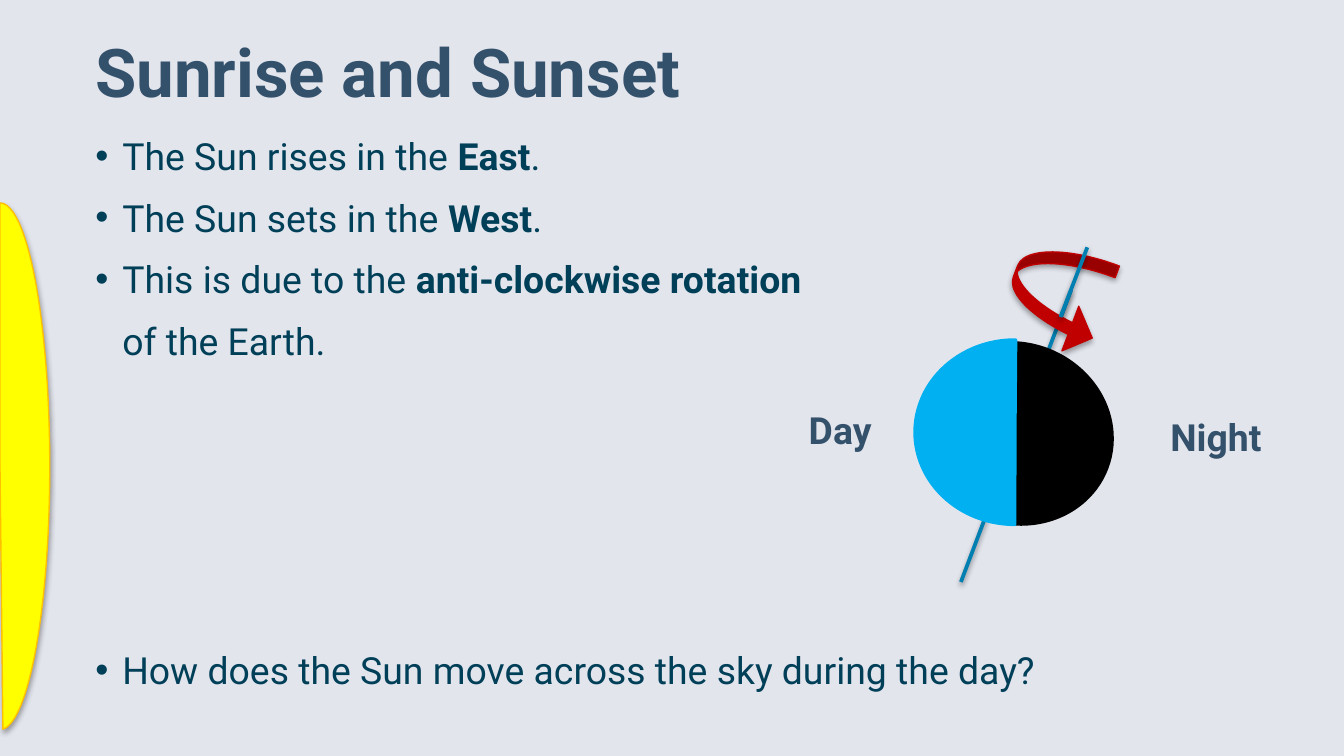
from lxml.etree import SubElement
from pptx import Presentation
from pptx.dml.color import RGBColor
from pptx.enum.shapes import MSO_CONNECTOR, MSO_SHAPE
from pptx.enum.text import MSO_ANCHOR, MSO_AUTO_SIZE
from pptx.oxml.ns import qn
from pptx.util import Pt

FONT = "Roboto"
BACKGROUND, HEADING, BODY = "E3E5ED", "34516C", "003F58"
AXIS, ROTATION, NIGHT, DAY = "007FB0", "C00000", "000000", "00B0F0"
SUN, SUN_EDGE = "FFFF00", "FFC000"
TILT = 20.7
INDENT = 14.4


def color(value):
    return RGBColor.from_string(value)


class SlideBuilder:
    def __init__(self, slide):
        self.slide = slide
        self.shapes = slide.shapes
        slide.background.fill.solid()
        slide.background.fill.fore_color.rgb = color(BACKGROUND)

    def group(self):
        return self.slide.shapes.add_group_shape().shapes

    def text_frame(self, left, top, width, height, margins=False):
        box = self.slide.shapes.add_textbox(Pt(left), Pt(top), Pt(width), Pt(height))
        frame = box.text_frame
        frame.word_wrap = True
        if not margins:
            frame.margin_left = frame.margin_right = 0
            frame.margin_top = frame.margin_bottom = 0
        return frame

    def run(self, paragraph, text, size, value, bold=False):
        run = paragraph.add_run()
        run.text = text
        font = run.font
        font.name, font.size, font.bold = FONT, Pt(size), bold
        font.color.rgb = color(value)

    def title(self, text, *place):
        frame = self.text_frame(*place)
        frame.vertical_anchor = MSO_ANCHOR.BOTTOM
        paragraph = frame.paragraphs[0]
        paragraph.line_spacing = 0.9
        self.run(paragraph, text, 36, HEADING, True)

    def body(self, lines, *place):
        """Each line is (has bullet, plain and bold runs in turn)."""
        frame = self.text_frame(*place)
        for index, (bulleted, runs) in enumerate(lines):
            paragraph = frame.add_paragraph() if index else frame.paragraphs[0]
            properties = paragraph._p.get_or_add_pPr()
            properties.set("marL", str(Pt(INDENT)))
            if bulleted:
                properties.set("indent", str(Pt(-INDENT)))
                SubElement(properties, qn("a:buFont"), typeface="Arial")
                SubElement(properties, qn("a:buChar"), char="•")
            if index:
                paragraph.space_before = Pt(9)
            for position, text in enumerate(runs):
                self.run(paragraph, text, 20, BODY, position % 2 == 1)

    def label(self, text, *place):
        frame = self.text_frame(*place, margins=True)
        frame.word_wrap = False
        frame.auto_size = MSO_AUTO_SIZE.SHAPE_TO_FIT_TEXT
        self.run(frame.paragraphs[0], text, 20, HEADING, True)

    def effects(self, shape, opacity=0, distance=0):
        """Replace the theme shadow by a soft one below, or by none."""
        effects = SubElement(shape._element.spPr, qn("a:effectLst"))
        if opacity:
            shadow = SubElement(effects, qn("a:outerShdw"), blurRad=str(Pt(3.1)),
                                dist=str(Pt(distance)), dir="5400000", rotWithShape="0")
            black = SubElement(shadow, qn("a:srgbClr"), val="000000")
            SubElement(black, qn("a:alpha"), val=str(opacity * 1000))

    def line(self, shapes, *ends):
        line = shapes.add_connector(MSO_CONNECTOR.STRAIGHT, *map(Pt, ends))
        line.line.color.rgb = color(AXIS)
        line.line.width = Pt(2)
        self.effects(line, 38, 1.6)

    def shape(self, shapes, kind, place, fill, edge, width,
              rotation=0, adjustments=(), flipped=False, shadow=False):
        shape = shapes.add_shape(kind, *map(Pt, place))
        shape.rotation = rotation
        for index, value in enumerate(adjustments):
            shape.adjustments[index] = value
        if flipped:
            shape._element.spPr.find(qn("a:xfrm")).set("flipH", "1")
        shape.fill.solid()
        shape.fill.fore_color.rgb = color(fill)
        shape.line.color.rgb = color(edge)
        shape.line.width = Pt(width)
        self.effects(shape, *((35, 1.8) if shadow else ()))


def main():
    presentation = Presentation()
    presentation.slide_width, presentation.slide_height = Pt(720), Pt(405)
    builder = SlideBuilder(presentation.slides.add_slide(presentation.slide_layouts[6]))

    # Title and statements
    builder.title("Sunrise and Sunset", 51.1, 9.4, 502.6, 50.4)
    builder.body([
        (True, ["The Sun rises in the ", "East", "."]),
        (True, ["The Sun sets in the ", "West", "."]),
        (True, ["This is due to the ", "anti-clockwise rotation"]),
        (False, ["of the Earth."]),
    ], 51.1, 71.3, 638, 95)
    builder.body([(True, ["How does the Sun move across the sky during the day?"])],
                 51.1, 347, 638, 57.6)
    builder.label("Day", 426.2, 214.6, 53.3, 31.7)

    # Tilted Earth with its axis and direction of rotation
    earth = builder.group()
    builder.line(earth, 573.8, 155.5, 514.8, 311.8)
    builder.shape(earth, MSO_SHAPE.CURVED_RIGHT_ARROW, (540.7, 131.8, 51.1, 54),
                  ROTATION, ROTATION, 0.75, rotation=TILT,
                  adjustments=(0.13, 0.5, 0.25), shadow=True)
    builder.line(earth, 582.5, 132.5, 568.1, 169.9)
    builder.shape(earth, MSO_SHAPE.OVAL, (491.8, 184.3, 104.4, 95.8),
                  NIGHT, NIGHT, 2, rotation=TILT)

    # Daylight half
    builder.shape(builder.shapes, MSO_SHAPE.PIE, (490.3, 182.2, 106.6, 98.6),
                  DAY, DAY, 2, rotation=180, adjustments=(53.72, 161.92), flipped=True)
    builder.label("Night", 619.9, 218.2, 69.8, 31.7)

    # Sun at the left edge
    builder.shape(builder.shapes, MSO_SHAPE.PIE, (-26.6, 108.7, 53.3, 282.2),
                  SUN, SUN_EDGE, 0.75, adjustments=(54.38, 162), flipped=True, shadow=True)

    presentation.save("out.pptx")


if __name__ == "__main__":
    main()
